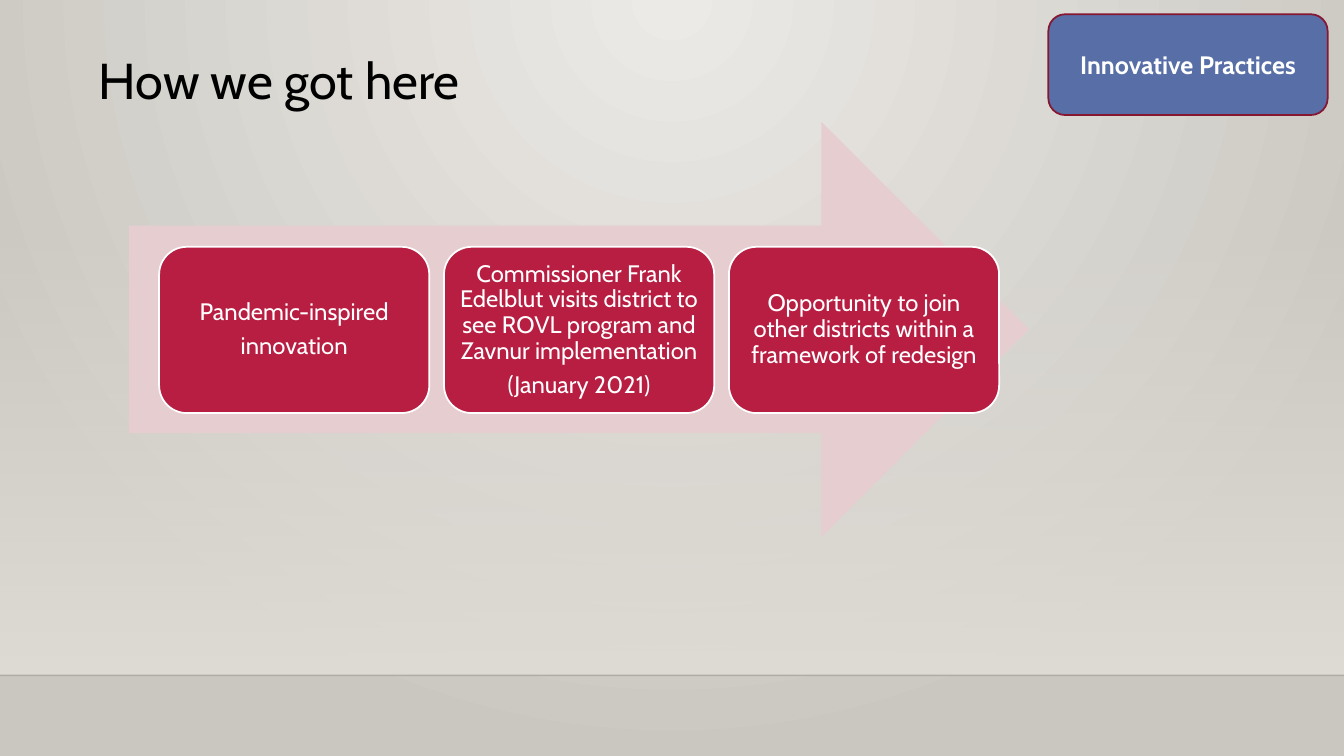
"""Build the "How we got here" slide: three steps on an arrow, with a badge."""
from dataclasses import dataclass
from typing import Optional

import lxml.etree
import pptx
import pptx.dml.color
import pptx.enum.dml
import pptx.enum.shapes
import pptx.enum.text
import pptx.oxml.ns
import pptx.util

Cm = pptx.util.Cm
Pt = pptx.util.Pt
RGBColor = pptx.dml.color.RGBColor
SHAPE = pptx.enum.shapes.MSO_SHAPE
ALIGN = pptx.enum.text.PP_ALIGN
qn = pptx.oxml.ns.qn

WHITE = RGBColor(0xFF, 0xFF, 0xFF)
BLACK = RGBColor(0x00, 0x00, 0x00)
GLOW = RGBColor(0xEC, 0xEA, 0xE7)
EDGE = RGBColor(0xCA, 0xC7, 0xC1)
FLOOR = RGBColor(0xDF, 0xDB, 0xD5)
PINK = RGBColor(0xE6, 0xCD, 0xCF)
CRIMSON = RGBColor(0xB7, 0x1E, 0x42)
MAROON = RGBColor(0x87, 0x16, 0x31)
BLUE = RGBColor(0x58, 0x6E, 0xA6)

FONT = "Cabin"
SLIDE_W, SLIDE_H = 33.87, 19.05
FLOOR_TOP, FLOOR_LINE = 5.61, 17.02
STEP_LEFT, STEP_TOP, STEP_W, STEP_H, STEP_PITCH = 4.01, 6.22, 6.81, 4.19, 7.18
STEP_INSET = 0.18

STEP_PARAGRAPH = {"alignment": ALIGN.CENTER, "line_spacing": 0.9, "space_after": Pt(6)}
STEP_FONT = {"name": FONT, "size": Pt(17)}
STEP_FONT_COLOR = WHITE
BADGE_FONT = {"name": FONT, "size": Pt(18), "bold": True}
TITLE_FONT = {"name": FONT, "size": Pt(36)}

STEPS = [
    ["Pandemic-inspired", "innovation"],
    ["Commissioner Frank Edelblut visits district to see ROVL program "
     "and Zavnur implementation", "(January 2021)"],
    ["Opportunity to join other districts within a framework of redesign"],
]


@dataclass
class Box:
    """A filled preset shape, measured in centimetres."""
    kind: int
    left: float
    top: float
    width: float
    height: float
    fill: RGBColor
    line: Optional[RGBColor] = None


def apply(target, values: dict) -> None:
    """Set each named attribute on the target."""
    for name, value in values.items():
        setattr(target, name, value)


def write(tf, lines: list[str], paragraph: dict, font: dict, color: RGBColor) -> None:
    """Write one formatted paragraph per line."""
    tf.word_wrap = True
    for i, line in enumerate(lines):
        p = tf.add_paragraph() if i else tf.paragraphs[0]
        apply(p, paragraph)
        r = p.add_run()
        r.text = line
        apply(r.font, font)
        r.font.color.rgb = color


def add_box(s, box: Box):
    """Draw a box and return its shape."""
    sp = s.shapes.add_shape(box.kind, Cm(box.left), Cm(box.top), Cm(box.width), Cm(box.height))
    sp.shadow.inherit = False
    sp.fill.solid()
    sp.fill.fore_color.rgb = box.fill
    if box.line is None:
        sp.line.fill.background()
    else:
        sp.line.color.rgb = box.line
        sp.line.width = Pt(1.25)
    sp.text_frame.vertical_anchor = pptx.enum.text.MSO_ANCHOR.MIDDLE
    return sp


def set_gradient(fill, colors: list[RGBColor]) -> None:
    """Give a fill a gradient of two colours."""
    fill.gradient()
    for stop, color in zip(fill.gradient_stops, colors):
        stop.color.rgb = color


def set_alpha(element, percent: int) -> None:
    """Make the first colour below an element partly transparent."""
    color = element.find(".//" + qn("a:srgbClr"))
    lxml.etree.SubElement(color, qn("a:alpha"), val=str(percent * 1000))


def add_background(s) -> None:
    """Paint the round glow, the floor haze and the floor line."""
    set_gradient(s.background.fill, [GLOW, EDGE])
    grad = s._element.find(".//" + qn("a:gradFill"))
    circle = lxml.etree.Element(qn("a:path"), path="circle")
    lxml.etree.SubElement(circle, qn("a:fillToRect"), l="43000", t="0", r="43000", b="100000")
    grad.replace(grad.find(qn("a:lin")), circle)

    haze = add_box(s, Box(SHAPE.RECTANGLE, 0, FLOOR_TOP, SLIDE_W, FLOOR_LINE - FLOOR_TOP, FLOOR))
    set_gradient(haze.fill, [FLOOR, FLOOR])
    haze.fill.gradient_angle = 270
    set_alpha(haze._element.spPr, 0)

    edge = s.shapes.add_connector(pptx.enum.shapes.MSO_CONNECTOR.STRAIGHT,
                                  Cm(0), Cm(FLOOR_LINE), Cm(SLIDE_W), Cm(FLOOR_LINE))
    edge.line.color.rgb = BLACK
    edge.line.width = Pt(1)
    set_alpha(edge._element.spPr, 20)
    lxml.etree.SubElement(edge._element.spPr, qn("a:effectLst"))


def add_steps(s) -> None:
    """Draw the arrow and the row of steps on it."""
    add_box(s, Box(SHAPE.RIGHT_ARROW, 3.25, 3.07, 22.68, 10.46, PINK))
    for i, lines in enumerate(STEPS):
        sp = add_box(s, Box(SHAPE.ROUNDED_RECTANGLE, STEP_LEFT + i * STEP_PITCH, STEP_TOP,
                            STEP_W, STEP_H, CRIMSON, WHITE))
        tf = sp.text_frame
        apply(tf, {f"margin_{side}": Cm(STEP_INSET) for side in ("left", "top", "right", "bottom")})
        write(tf, lines, STEP_PARAGRAPH, STEP_FONT, STEP_FONT_COLOR)


def main() -> None:
    """Build and save the slide."""
    prs = pptx.Presentation()
    prs.slide_width, prs.slide_height = Cm(SLIDE_W), Cm(SLIDE_H)
    s = prs.slides.add_slide(prs.slide_layouts[6])
    add_background(s)
    add_steps(s)
    badge = add_box(s, Box(SHAPE.ROUNDED_RECTANGLE, 26.42, 0.36, 7.04, 2.54, BLUE, MAROON))
    write(badge.text_frame, ["Innovative Practices"], {"alignment": ALIGN.CENTER},
          BADGE_FONT, WHITE)
    title = s.shapes.add_textbox(Cm(2.24), Cm(1.12), Cm(9.8), Cm(1.8))
    write(title.text_frame, ["How we got here"], {"alignment": ALIGN.LEFT}, TITLE_FONT, BLACK)
    prs.save("out.pptx")


if __name__ == "__main__":
    main()
